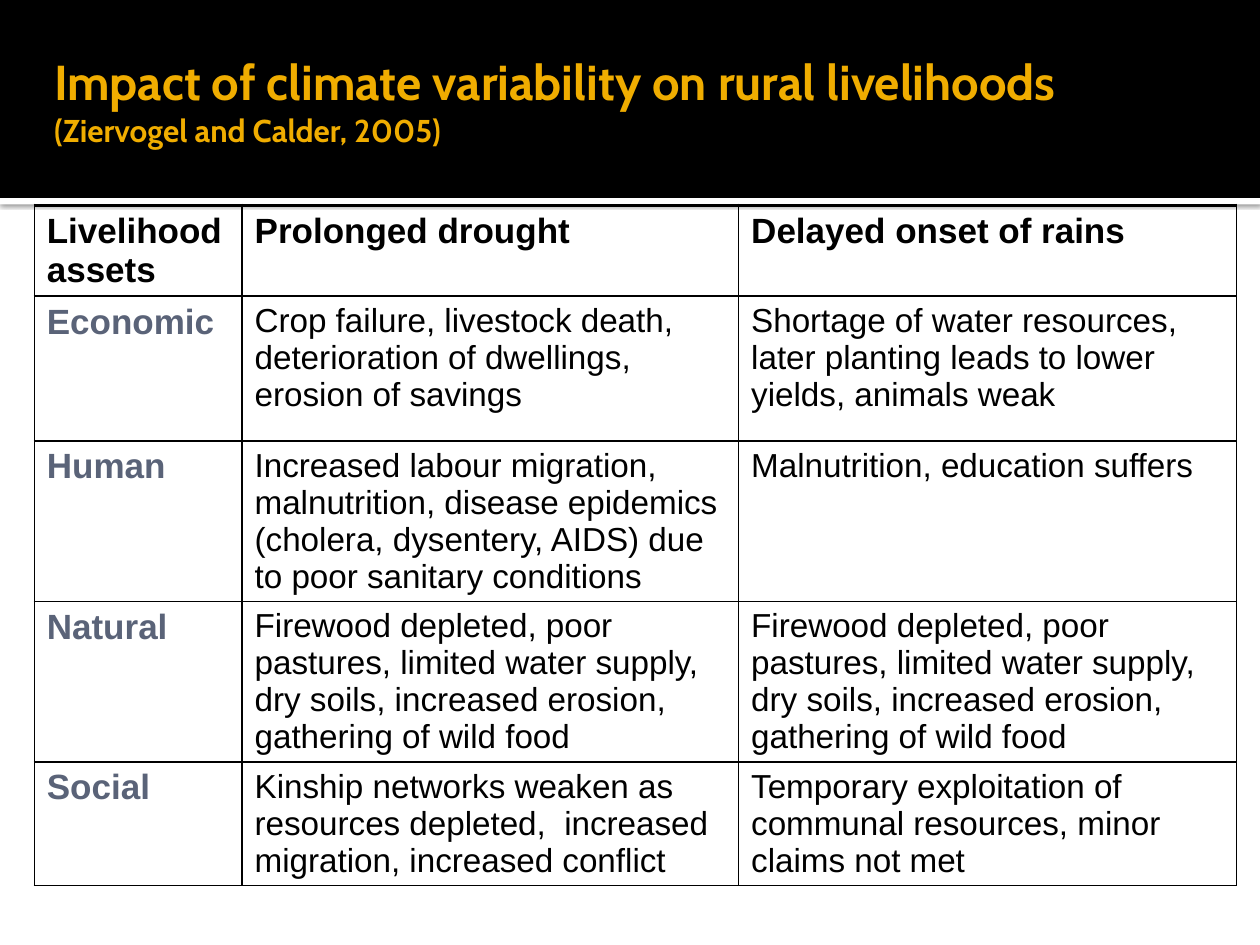
import dataclasses

import lxml.etree
import pptx
import pptx.dml.color
import pptx.enum.shapes
import pptx.enum.text
import pptx.oxml
import pptx.oxml.ns
import pptx.util
from pptx.util import Cm


@dataclasses.dataclass(frozen=True)
class Theme:
    black: str = "000000"
    white: str = "FFFFFF"
    gold: str = "F0AD00"
    slate: str = "5A6378"
    title_font: str = "Cabin"
    body_font: str = "Arial"
    title_size: int = 28
    source_size: int = 18
    label_size: int = 20
    body_size: int = 19
    outer_line: float = 0.75
    inner_line: float = 1
    top_line: float = 2.25


@dataclasses.dataclass(frozen=True)
class Box:
    left: float
    top: float
    width: float
    height: float

    def lengths(self):
        return [Cm(value) for value in dataclasses.astuple(self)]


THEME = Theme()
NATURAL_IMPACT = (
    "Firewood depleted, poor pastures, limited water supply, "
    "dry soils, increased erosion, gathering of wild food"
)
ROWS = [
    ("Livelihood\nassets", "Prolonged drought", "Delayed onset of rains"),
    (
        "Economic",
        "Crop failure, livestock death, deterioration of dwellings, erosion of savings",
        "Shortage of water resources, later planting leads to lower yields, animals weak",
    ),
    (
        "Human",
        "Increased labour migration, malnutrition, disease epidemics "
        "(cholera, dysentery, AIDS) due to poor sanitary conditions",
        "Malnutrition, education suffers",
    ),
    ("Natural", NATURAL_IMPACT, NATURAL_IMPACT),
    (
        "Social",
        "Kinship networks weaken as resources depleted,  increased migration, increased conflict",
        "Temporary exploitation of communal resources, minor claims not met",
    ),
]
COLUMN_WIDTHS = [4.19, 10.01, 10.03]
ROW_HEIGHTS = [1.14, 2.92, 2.97, 1.73, 1.85]


def rgb(color):
    return pptx.dml.color.RGBColor.from_string(color)


def style_font(font, name, size, color, bold):
    font.name = name
    font.size = pptx.util.Pt(size)
    font.color.rgb = rgb(color)
    font.bold = bold


def add_band(page, box, color):
    band = page.shapes.add_shape(
        pptx.enum.shapes.MSO_SHAPE.RECTANGLE, *box.lengths()
    )
    band.shadow.inherit = False
    band.fill.solid()
    band.fill.fore_color.rgb = rgb(color)
    band.line.fill.background()
    return band


def add_drop_shadow(shape):
    qn = pptx.oxml.ns.qn
    effects = shape._element.spPr.find(qn("a:effectLst"))
    shadow = lxml.etree.SubElement(
        effects,
        qn("a:outerShdw"),
        blurRad=str(pptx.util.Pt(2.5)),
        dist=str(pptx.util.Pt(0.8)),
        dir="5400000",
        algn="tl",
        rotWithShape="0",
    )
    color = lxml.etree.SubElement(shadow, qn("a:srgbClr"), val=THEME.black)
    lxml.etree.SubElement(color, qn("a:alpha"), val="60000")


def build_header(page, box):
    strip = add_band(
        page, Box(box.left, box.top + box.height, box.width, 0.13), THEME.white
    )
    add_drop_shadow(strip)
    add_band(page, box, THEME.black)

    title = page.shapes.title
    page.shapes._spTree.append(title._element)
    title.left, title.top, title.width, title.height = Box(
        box.left + 0.84, box.top + 0.43, box.width, 3.18
    ).lengths()
    frame = title.text_frame
    frame.word_wrap = True
    frame.auto_size = pptx.enum.text.MSO_AUTO_SIZE.NONE
    frame.vertical_anchor = pptx.enum.text.MSO_ANCHOR.MIDDLE
    frame.margin_left = Cm(0.25)
    frame.margin_right = frame.margin_top = frame.margin_bottom = Cm(0.13)

    para = frame.paragraphs[0]
    para.alignment = pptx.enum.text.PP_ALIGN.LEFT
    style_font(para.font, THEME.title_font, THEME.title_size, THEME.gold, True)
    para.add_run().text = "Impact of climate variability on rural livelihoods "
    para.add_line_break()
    source = para.add_run()
    source.text = "(Ziervogel and Calder, 2005)"
    source.font.size = pptx.util.Pt(THEME.source_size)


def set_borders(cell, widths):
    properties = cell._tc.get_or_add_tcPr()
    for side, width in zip("LRTB", widths):
        properties.append(
            pptx.oxml.parse_xml(
                f'<a:ln{side} {pptx.oxml.ns.nsdecls("a")} w="{pptx.util.Pt(width)}">'
                f'<a:solidFill><a:srgbClr val="{THEME.black}"/></a:solidFill>'
                f"</a:ln{side}>"
            )
        )


def fill_cell(cell, text, row, column):
    last_column = len(COLUMN_WIDTHS) - 1
    set_borders(
        cell,
        [
            THEME.outer_line if column == 0 else THEME.inner_line,
            THEME.outer_line if column == last_column else THEME.inner_line,
            THEME.top_line if row == 0 else THEME.inner_line,
            THEME.inner_line,
        ],
    )
    cell.fill.background()
    cell.text = text
    is_label = row == 0 or column == 0
    size = THEME.label_size if is_label else THEME.body_size
    color = THEME.slate if column == 0 and row > 0 else THEME.black
    for para in cell.text_frame.paragraphs:
        style_font(para.font, THEME.body_font, size, color, is_label)


def build_impact_table(page, box):
    table = page.shapes.add_table(
        len(ROWS), len(COLUMN_WIDTHS), *box.lengths()
    ).table
    table.first_row = False
    table.horz_banding = False
    for column, width in zip(table.columns, COLUMN_WIDTHS):
        column.width = Cm(width)
    for row, height in zip(table.rows, ROW_HEIGHTS):
        row.height = Cm(height)
    for row, texts in enumerate(ROWS):
        for column, text in enumerate(texts):
            fill_cell(table.cell(row, column), text, row, column)


def main():
    deck = pptx.Presentation()
    deck.slide_width = Cm(25.4)
    deck.slide_height = Cm(19.05)
    page = deck.slides.add_slide(deck.slide_layouts.get_by_name("Title Only"))
    build_header(page, Box(0, 0, 25.4, 3.99))
    build_impact_table(
        page, Box(0.69, 4.14, sum(COLUMN_WIDTHS), sum(ROW_HEIGHTS))
    )
    deck.save("out.pptx")


if __name__ == "__main__":
    main()
